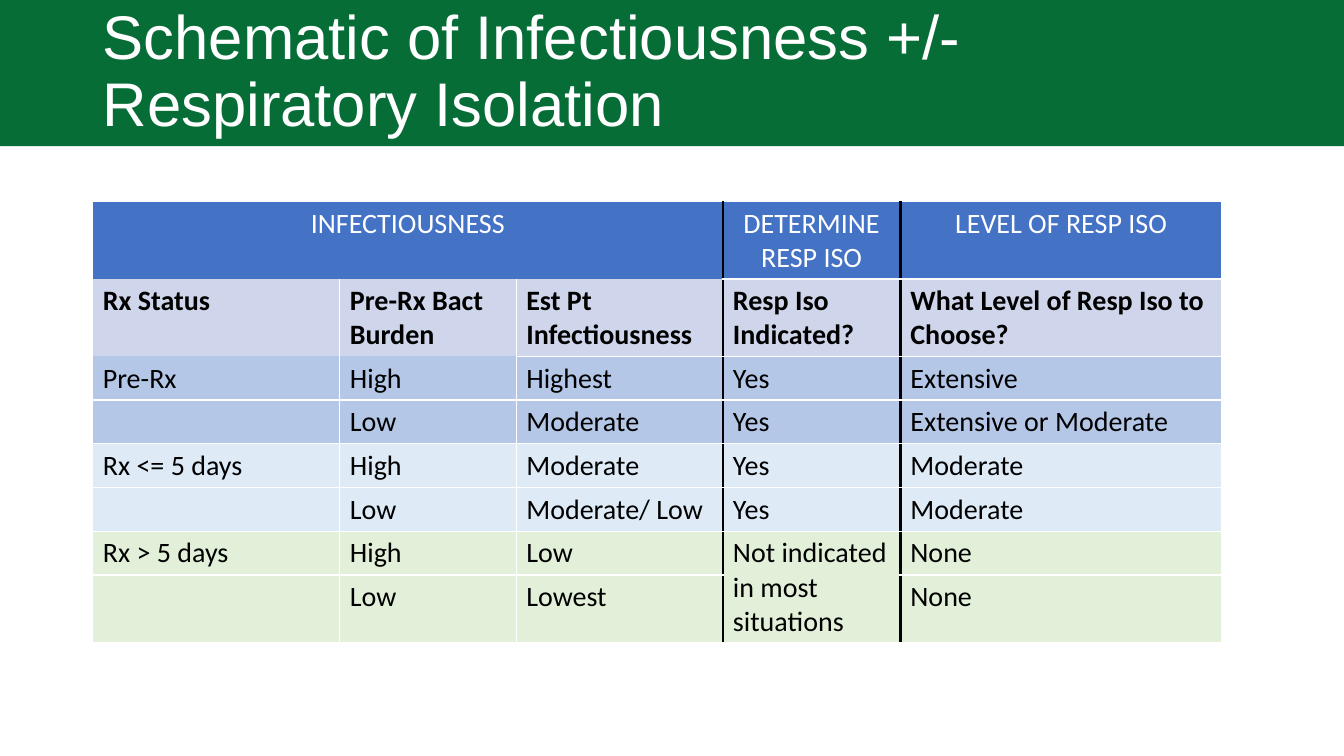
from lxml.etree import SubElement
from pptx import Presentation
from pptx.dml.color import RGBColor
from pptx.enum.shapes import MSO_SHAPE as Shape
from pptx.enum.text import MSO_ANCHOR as Anchor, PP_ALIGN as Align
from pptx.oxml.ns import qn
from pptx.util import Inches, Pt

TITLE = "Schematic of Infectiousness +/- Respiratory Isolation"
# Each row: fill name, then its cell texts
ROWS = [
    ("header", ["INFECTIOUSNESS", "", "", "DETERMINE RESP ISO", "LEVEL OF RESP ISO"]),
    ("subheader", ["Rx Status", "Pre-Rx Bact Burden", "Est Pt Infectiousness",
                   "Resp Iso Indicated?", "What Level of Resp Iso to Choose?"]),
    ("untreated", ["Pre-Rx", "High", "Highest", "Yes", "Extensive"]),
    ("untreated", ["", "Low", "Moderate", "Yes", "Extensive or Moderate"]),
    ("early", ["Rx <= 5 days", "High", "Moderate", "Yes", "Moderate"]),
    ("early", ["", "Low", "Moderate/ Low", "Yes", "Moderate"]),
    ("late", ["Rx > 5 days", "High", "Low", "Not indicated in most situations", "None"]),
    ("late", ["", "Low", "Lowest", "", "None"]),
]
MERGES = [((0, 0), (0, 2)), ((6, 3), (7, 3))]
COLUMN_WIDTHS = [2.45, 1.75, 2.05, 1.76, 3.19]
ROW_HEIGHT = 0.41
SECTION_EDGES = (3, 4)  # columns that start after a black rule
OPEN_EDGES = {(1, 0), (1, 1), (1, 2), (2, 0), (2, 1)}  # cells with no line above
COLORS = {
    "banner": "076D37", "white": "FFFFFF", "black": "000000",
    "header": "4472C4", "subheader": "CFD5EA", "untreated": "B4C7E7",
    "early": "DEEBF7", "late": "E2F0D9",
}
TITLE_FONT = {"name": "Arial", "size": Pt(44)}
CELL_FONT = {"name": "Calibri", "size": Pt(20)}


def color(name):
    return RGBColor.from_string(COLORS[name])


def set_font(font, settings, color_name):
    for attribute, value in settings.items():
        setattr(font, attribute, value)
    font.color.rgb = color(color_name)


def add_border(cell, side, color_name, points):
    """Draw one cell edge; a color_name of None leaves the edge empty."""
    line = SubElement(cell._tc.get_or_add_tcPr(), qn(f"a:ln{side}"), w=str(Pt(points)))
    if color_name is None:
        SubElement(line, qn("a:noFill"))
    else:
        fill = SubElement(line, qn("a:solidFill"))
        SubElement(fill, qn("a:srgbClr"), val=COLORS[color_name])


def vertical_edge(column):
    return ("black", 2.25) if column in SECTION_EDGES else ("white", 1)


def horizontal_edge(row, column):
    return (None, 1) if (row, column) in OPEN_EDGES else ("white", 1)


def add_title(slide, slide_width):
    banner = slide.shapes.add_shape(Shape.RECTANGLE, 0, 0, slide_width, Inches(1.45))
    banner.shadow.inherit = False
    banner.fill.solid()
    banner.fill.fore_color.rgb = color("banner")
    banner.line.fill.background()

    title = slide.shapes.add_textbox(Inches(0.92), 0, Inches(9.88), Inches(1.45))
    frame = title.text_frame
    frame.word_wrap = True
    frame.vertical_anchor = Anchor.MIDDLE
    frame.text = TITLE
    frame.paragraphs[0].line_spacing = 0.9
    set_font(frame.paragraphs[0].runs[0].font, TITLE_FONT, "white")


def add_isolation_table(slide):
    table = slide.shapes.add_table(
        len(ROWS), len(COLUMN_WIDTHS), Inches(0.92), Inches(2),
        Inches(sum(COLUMN_WIDTHS)), Inches(ROW_HEIGHT * len(ROWS))).table
    for column, width in zip(table.columns, COLUMN_WIDTHS):
        column.width = Inches(width)
    for row in table.rows:
        row.height = Inches(ROW_HEIGHT)
    for first, last in MERGES:
        table.cell(*first).merge(table.cell(*last))

    for r, (level, texts) in enumerate(ROWS):
        for c, text in enumerate(texts):
            cell = table.cell(r, c)
            add_border(cell, "L", *vertical_edge(c))
            add_border(cell, "R", *vertical_edge(c + 1))
            add_border(cell, "T", *horizontal_edge(r, c))
            add_border(cell, "B", *horizontal_edge(r + 1, c))
            cell.fill.solid()
            cell.fill.fore_color.rgb = color(level)
            if not text:
                continue
            cell.text = text
            paragraph = cell.text_frame.paragraphs[0]
            paragraph.alignment = Align.CENTER if level == "header" else Align.LEFT
            set_font(paragraph.runs[0].font, CELL_FONT | {"bold": level == "subheader"},
                     "white" if level == "header" else "black")


def main():
    deck = Presentation()
    deck.slide_width, deck.slide_height = Inches(13.33), Inches(7.5)
    slide = deck.slides.add_slide(deck.slide_layouts[6])
    add_title(slide, deck.slide_width)
    add_isolation_table(slide)
    deck.save("out.pptx")


if __name__ == "__main__":
    main()
